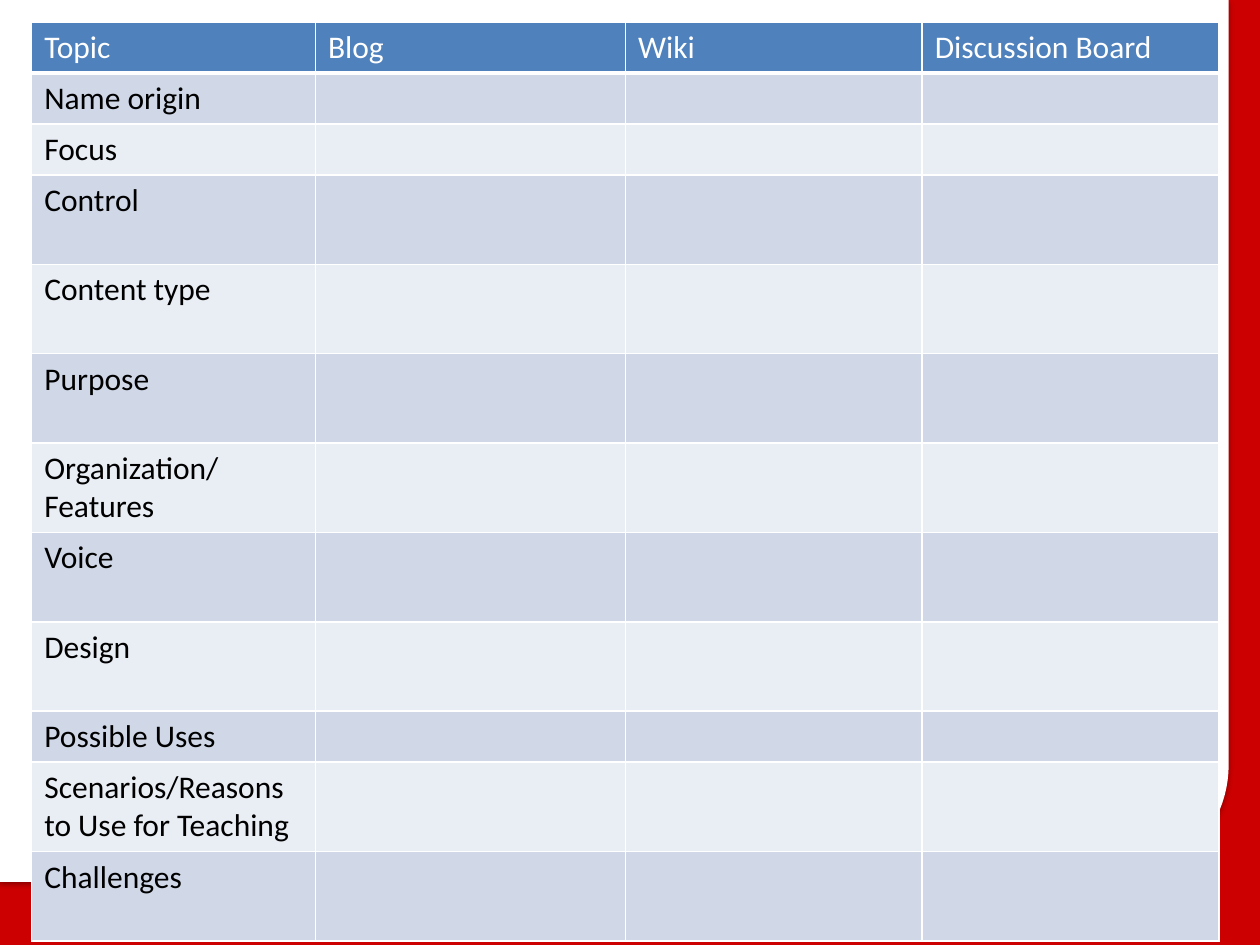
import math

from lxml import etree
from pptx import Presentation
from pptx.dml.color import RGBColor
from pptx.oxml import parse_xml
from pptx.oxml.ns import nsdecls
from pptx.util import Cm, Pt

COLORS = {
    "red": "CC0000",
    "white": "FFFFFF",
    "black": "000000",
    "header": "4F81BD",
    "dark band": "D0D8E8",
    "light band": "E9EDF4",
}
FONT = "Calibri"
SHORT, TALL = 1.03, 1.8

HEADINGS = ["Topic", "Blog", "Wiki", "Discussion Board"]
COLUMN_WIDTHS = [5.72, 6.25, 5.98, 5.98]
TOPICS = [
    ("Name origin", SHORT),
    ("Focus", SHORT),
    ("Control", TALL),
    ("Content type", TALL),
    ("Purpose", TALL),
    ("Organization/\nFeatures", TALL),
    ("Voice", TALL),
    ("Design", TALL),
    ("Possible Uses", SHORT),
    ("Scenarios/Reasons to Use for Teaching", TALL),
    ("Challenges", TALL),
]


def add_borders(cell, bottom_width):
    """Draw white lines on all four sides of a cell."""
    properties = cell._tc.get_or_add_tcPr()
    for index, side in enumerate("LRTB"):
        width = Pt(bottom_width if side == "B" else 1)
        properties.insert(index, parse_xml(
            f'<a:ln{side} {nsdecls("a")} w="{width}"><a:solidFill>'
            f'<a:srgbClr val="{COLORS["white"]}"/></a:solidFill></a:ln{side}>'))


def write_cell(cell, text, fill, color):
    cell.fill.solid()
    cell.fill.fore_color.rgb = RGBColor.from_string(COLORS[fill])
    frame = cell.text_frame
    for index, line in enumerate(text.split("\n")):
        para = frame.add_paragraph() if index else frame.paragraphs[0]
        para.font.size = Pt(18)
        if line:
            span = para.add_run()
            span.text = line
            span.font.name = FONT
            span.font.size = Pt(18)
            span.font.bold = False
            span.font.color.rgb = RGBColor.from_string(COLORS[color])


deck = Presentation()
deck.slide_width, deck.slide_height = Cm(25.4), Cm(19.05)
page = deck.slides.add_slide(deck.slide_layouts[6])
page.background.fill.solid()
page.background.fill.fore_color.rgb = RGBColor.from_string(COLORS["red"])

# White sheet with a rounded lower right corner
right, bottom, radius = 24.77, 17.78, 2.36
corner = []
for step in range(25):
    angle = math.radians(90 * step / 24)
    corner.append((Cm(right - radius + radius * math.cos(angle)),
                   Cm(bottom - radius + radius * math.sin(angle))))
builder = page.shapes.build_freeform(0, Cm(-0.02))
builder.add_line_segments([(Cm(right), 0), *corner, (0, Cm(bottom))], close=True)
sheet = builder.convert_to_shape()
sheet.fill.solid()
sheet.fill.fore_color.rgb = RGBColor.from_string(COLORS["white"])
sheet.line.fill.background()
sheet.shadow.inherit = False
effects = sheet._element.spPr.find("{*}effectLst")
effects.append(etree.fromstring(
    f'<a:outerShdw {nsdecls("a")} blurRad="{Pt(3.1)}" dist="{Pt(1.8)}" '
    f'dir="5400000" algn="ctr" rotWithShape="0"><a:srgbClr val="{COLORS["black"]}">'
    '<a:alpha val="35000"/></a:srgbClr></a:outerShdw>'))

# Comparison table
heights = [SHORT] + [height for _, height in TOPICS]
table = page.shapes.add_table(
    len(heights), len(HEADINGS), Cm(0.64), Cm(0.44),
    Cm(sum(COLUMN_WIDTHS)), Cm(sum(heights))).table
table.first_row = False
table.horz_banding = False
for column, width in zip(table.columns, COLUMN_WIDTHS):
    column.width = Cm(width)
for row, height in zip(table.rows, heights):
    row.height = Cm(height)

contents = [HEADINGS] + [[topic, "", "", ""] for topic, _ in TOPICS]
for row_index, texts in enumerate(contents):
    if row_index == 0:
        fill, color, bottom_width = "header", "white", 3
    else:
        fill = "dark band" if row_index % 2 else "light band"
        color, bottom_width = "black", 1
    for column_index, text in enumerate(texts):
        cell = table.cell(row_index, column_index)
        write_cell(cell, text, fill, color)
        add_borders(cell, bottom_width)

deck.save("out.pptx")
